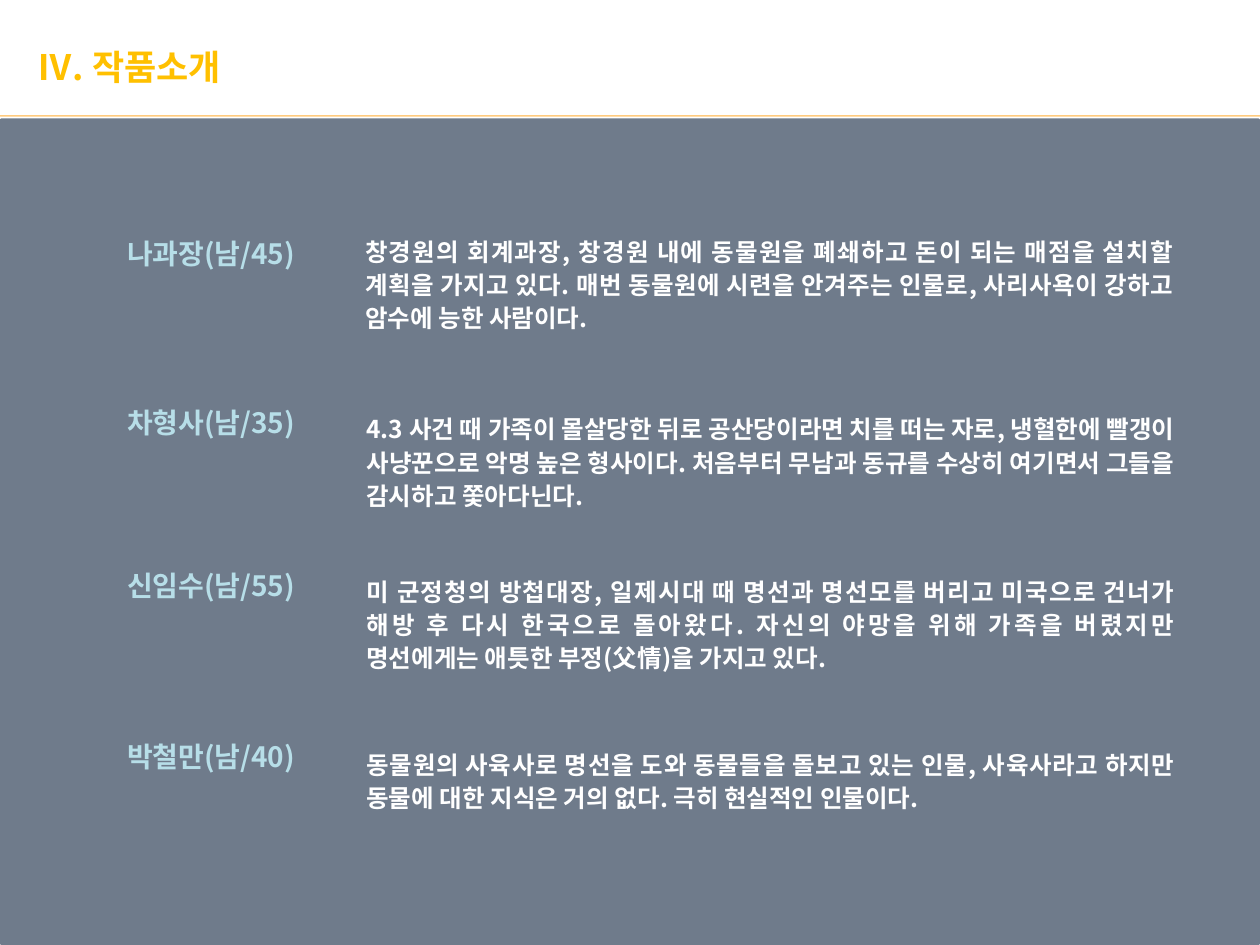
from dataclasses import dataclass

from lxml import etree
from pptx import Presentation
from pptx.dml.color import RGBColor
from pptx.enum.shapes import MSO_CONNECTOR, MSO_SHAPE
from pptx.enum.text import MSO_ANCHOR, MSO_AUTO_SIZE, PP_ALIGN
from pptx.oxml.ns import qn
from pptx.util import Inches, Pt

ROUNDED = MSO_SHAPE.ROUNDED_RECTANGLE
STRAIGHT = MSO_CONNECTOR.STRAIGHT
TOP = MSO_ANCHOR.TOP
GROW = MSO_AUTO_SIZE.SHAPE_TO_FIT_TEXT
LEFT, JUSTIFY = PP_ALIGN.LEFT, PP_ALIGN.JUSTIFY
TITLE_ONLY = 5


@dataclass(frozen=True)
class Theme:
    """Colours and type sizes of the slide."""
    font: str = "Noto Sans CJK KR"
    panel: str = "0F243E"
    rule: str = "FF9900"
    title: str = "FFC000"
    name: str = "B7DEE8"
    body: str = "FFFFFF"
    title_size: int = 20
    name_size: int = 16
    body_size: int = 14
    body_leading: int = 19


class SlideBuilder:
    """Draws styled elements on one slide."""

    def __init__(self, slide, theme):
        self.slide = slide
        self.theme = theme

    def set_alpha(self, fill, percent):
        """Make a solid fill partly transparent."""
        color = fill.fore_color._xFill[0]
        etree.SubElement(color, qn("a:alpha"), val=str(percent * 1000))

    def panel(self, left, top, width, height):
        """Draw the translucent background panel."""
        shape = self.slide.shapes.add_shape(
            ROUNDED, Inches(left), Inches(top), Inches(width), Inches(height))
        shape.adjustments[0] = 0.002
        shape.shadow.inherit = False
        shape.fill.solid()
        shape.fill.fore_color.rgb = RGBColor.from_string(self.theme.panel)
        self.set_alpha(shape.fill, 60)
        shape.line.fill.background()

    def rule(self, left, top, width):
        """Draw a translucent horizontal line."""
        connector = self.slide.shapes.add_connector(
            STRAIGHT, Inches(left), Inches(top), Inches(left + width), Inches(top))
        connector.line.width = Pt(1)
        connector.line.color.rgb = RGBColor.from_string(self.theme.rule)
        self.set_alpha(connector.line.fill, 50)
        etree.SubElement(connector._element.spPr, qn("a:effectLst"))

    def set_text(self, shape, text, size, color, wrap=True, **paragraph_format):
        """Fill a shape with one formatted paragraph."""
        frame = shape.text_frame
        frame_format = {"word_wrap": wrap, "auto_size": GROW, "vertical_anchor": TOP}
        for name, value in frame_format.items():
            setattr(frame, name, value)
        paragraph = frame.paragraphs[0]
        for name, value in paragraph_format.items():
            setattr(paragraph, name, value)
        run = paragraph.add_run()
        run.text = text
        font_format = {"size": Pt(size), "bold": True, "name": self.theme.font}
        for name, value in font_format.items():
            setattr(run.font, name, value)
        run.font.color.rgb = RGBColor.from_string(color)
        properties = run._r.get_or_add_rPr()
        etree.SubElement(properties, qn("a:ea"), typeface=self.theme.font)

    def title(self, text, left, top, width, height):
        """Place the slide title in its placeholder."""
        shape = self.slide.shapes.title
        place = {"left": left, "top": top, "width": width, "height": height}
        for name, value in place.items():
            setattr(shape, name, Inches(value))
        self.set_text(shape, text, self.theme.title_size, self.theme.title,
                      wrap=False, alignment=LEFT)

    def text_box(self, text, box, size, color, **paragraph_format):
        """Add a wrapping text box."""
        shape = self.slide.shapes.add_textbox(*(Inches(value) for value in box))
        self.set_text(shape, text, size, color, **paragraph_format)

    def character(self, name, description, name_top, left, top, height):
        """Add a character's name and description."""
        theme = self.theme
        self.text_box(description, (left, top, 6.61, height), theme.body_size, theme.body,
                      alignment=JUSTIFY, line_spacing=Pt(theme.body_leading))
        self.text_box(name, (0.91, name_top, 1.65, 0.37), theme.name_size, theme.name)


CHARACTERS = [
    ("나과장(남/45)",
     "창경원의 회계과장, 창경원 내에 동물원을 폐쇄하고 돈이 되는 매점을 설치할 계획을 가지고 있다. "
     "매번 동물원에 시련을 안겨주는 인물로, 사리사욕이 강하고 암수에 능한 사람이다.",
     1.83, 2.8, 1.8, 1.2),
    ("차형사(남/35)",
     "4.3 사건 때 가족이 몰살당한 뒤로 공산당이라면 치를 떠는 자로, 냉혈한에 빨갱이 사냥꾼으로 악명 높은 "
     "형사이다. 처음부터 무남과 동규를 수상히 여기면서 그들을 감시하고 쫓아다닌다.",
     3.17, 2.81, 3.21, 0.9),
    ("신임수(남/55)",
     "미 군정청의 방첩대장, 일제시대 때 명선과 명선모를 버리고 미국으로 건너가 해방 후 다시 한국으로 "
     "돌아왔다. 자신의 야망을 위해 가족을 버렸지만 명선에게는 애틋한 부정(父情)을 가지고 있다.",
     4.46, 2.81, 4.5, 0.9),
    ("박철만(남/40)",
     "동물원의 사육사로 명선을 도와 동물들을 돌보고 있는 인물, 사육사라고 하지만 동물에 대한 지식은 "
     "거의 없다. 극히 현실적인 인물이다.",
     5.82, 2.81, 5.87, 0.88),
]


def main():
    """Build and save the presentation."""
    presentation = Presentation()
    presentation.slide_width = Inches(10)
    presentation.slide_height = Inches(7.5)
    slide = presentation.slides.add_slide(presentation.slide_layouts[TITLE_ONLY])
    builder = SlideBuilder(slide, Theme())
    builder.panel(0, 0.94, 10, 6.56)
    builder.rule(0, 0.92, 10)
    builder.title("Ⅳ. 작품소개", 0.2, 0.31, 1.77, 0.44)
    for character in CHARACTERS:
        builder.character(*character)
    presentation.save("out.pptx")


if __name__ == "__main__":
    main()
